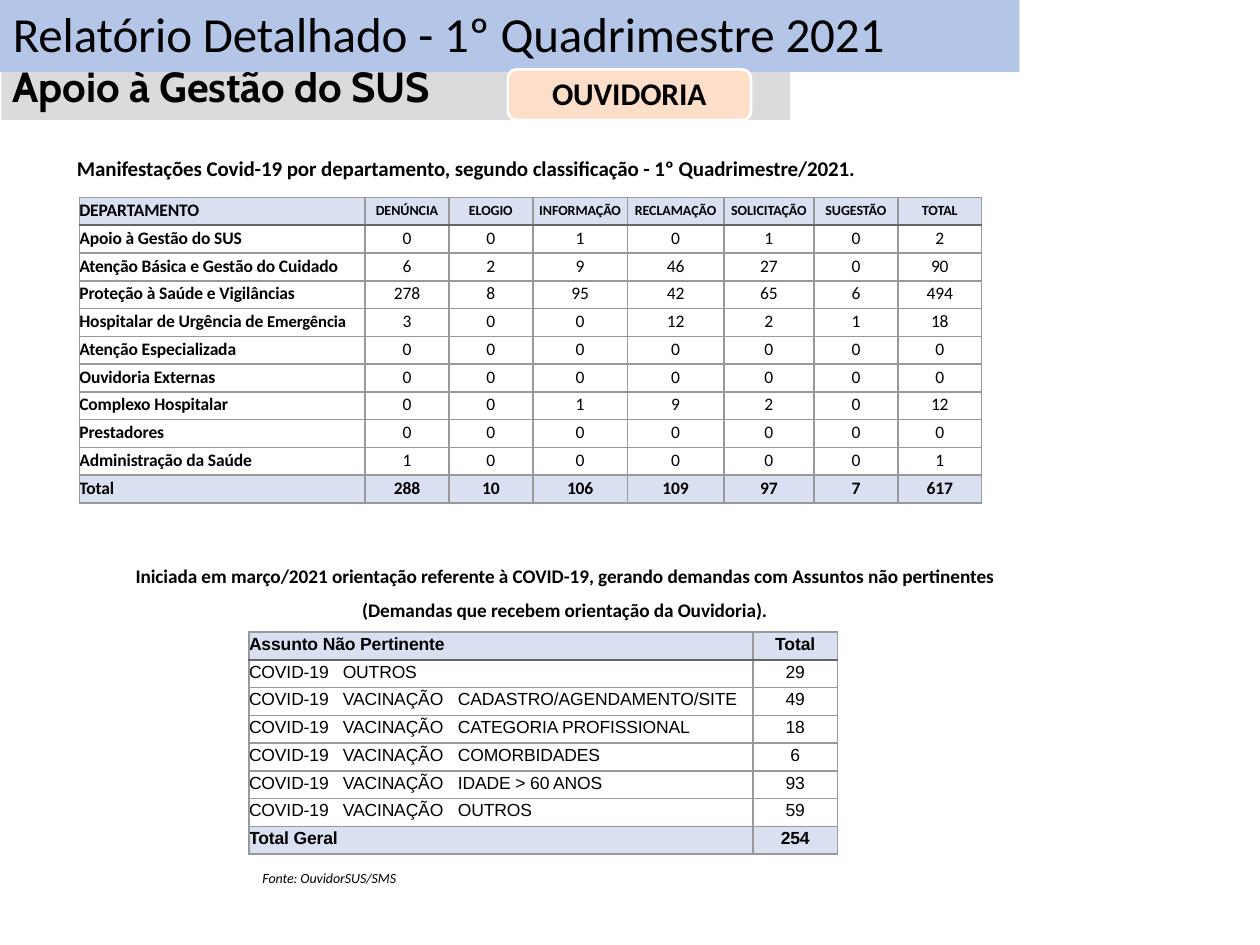
import pptx
import pptx.dml.color
import pptx.enum.shapes
import pptx.enum.text
import pptx.oxml
import pptx.oxml.ns
import pptx.util
from dataclasses import dataclass

Cm = pptx.util.Cm
Pt = pptx.util.Pt
Align = pptx.enum.text.PP_ALIGN
Preset = pptx.enum.shapes.MSO_SHAPE


@dataclass(frozen=True)
class Theme:
    band: str = "B4C6E7"
    strip: str = "DBDBDB"
    badge: str = "FDDEC9"
    badge_line: str = "FFFFFF"
    shade: str = "D9E0F1"
    grid: str = "999999"
    header_rule: str = "666666"
    ink: str = "000000"
    body: str = "Calibri"
    section: str = "Cabin"
    plain: str = "Arial"
    title_size: float = 28
    section_size: float = 24
    badge_size: float = 18
    heading_size: float = 12
    note_size: float = 11
    cell_size: float = 10
    tight_size: float = 9.5
    small_size: float = 8
    tracking: int = -5


def rgb(code):
    return pptx.dml.color.RGBColor.from_string(code)


def draw_borders(cell, lines):
    """Add edge lines in the order left, right, top, bottom."""
    properties = cell._tc.get_or_add_tcPr()
    for index, (side, (color, points)) in enumerate(zip("LRTB", lines)):
        properties.insert(index, pptx.oxml.parse_xml(
            f'<a:ln{side} {pptx.oxml.ns.nsdecls("a")} w="{int(Pt(points))}">'
            f'<a:solidFill><a:srgbClr val="{color}"/></a:solidFill></a:ln{side}>'))


def set_tabs(para, stops):
    """Place left tab stops, given in centimetres."""
    tabs = "".join(f'<a:tab pos="{int(Cm(stop))}" algn="l"/>' for stop in stops)
    para._p.get_or_add_pPr().append(pptx.oxml.parse_xml(
        f'<a:tabLst {pptx.oxml.ns.nsdecls("a")}>{tabs}</a:tabLst>'))


class SlideBuilder:
    def __init__(self, deck, theme):
        self.theme = theme
        self.page = deck.slides.add_slide(deck.slide_layouts[6])

    def fill_para(self, para, content, align=Align.LEFT, **format_values):
        """Fill a paragraph with a string or with (text, size) spans."""
        para.alignment = align
        spans = [(content, None)] if isinstance(content, str) else content
        for text, size in spans:
            span = para.add_run()
            span.text = text
            values = {"name": self.theme.body, "bold": False, **format_values}
            values["size"] = Pt(size or values["size"])
            for name, value in values.items():
                setattr(span.font, name, value)
            span.font.color.rgb = rgb(self.theme.ink)
            span._r.get_or_add_rPr().set("spc", str(self.theme.tracking))

    def shape(self, preset, place, fill, line=None):
        shape = self.page.shapes.add_shape(preset, *map(Cm, place))
        shape.shadow.inherit = False
        shape.fill.solid()
        shape.fill.fore_color.rgb = rgb(fill)
        if line:
            shape.line.color.rgb = rgb(line)
            shape.line.width = Pt(1.5)
        else:
            shape.line.fill.background()
        return shape

    def text(self, place, lines, top=0.04, gap=0, **format_values):
        box = self.page.shapes.add_textbox(*map(Cm, place))
        frame = box.text_frame
        margins = {"margin_left": 0.03, "margin_top": top,
                   "margin_right": 0, "margin_bottom": 0}
        for name, value in margins.items():
            setattr(frame, name, Cm(value))
        frame.word_wrap = True
        for index, line in enumerate(lines):
            para = frame.add_paragraph() if index else frame.paragraphs[0]
            if index:
                para.space_before = Pt(gap)
            self.fill_para(para, line, **format_values)

    def table(self, left, top, widths, rows, font, head_size, bold_labels, tabs=()):
        """Draw a grid whose first and last rows are shaded and bold."""
        height = 0.56
        grid = self.page.shapes.add_table(
            len(rows), len(widths), Cm(left), Cm(top),
            Cm(sum(widths)), Cm(height * len(rows))).table
        grid.first_row = grid.horz_banding = False
        for column, width in zip(grid.columns, widths):
            column.width = Cm(width)
        for r, values in enumerate(rows):
            grid.rows[r].height = Cm(height)
            for c, value in enumerate(values):
                size = head_size if r == 0 and c else self.theme.cell_size
                self.cell(grid.cell(r, c), value, r, c, r in (0, len(rows) - 1),
                          bold_labels, tabs, font, size)

    def cell(self, cell, value, r, c, shaded, bold_labels, tabs, font, size):
        theme = self.theme
        small = size < theme.cell_size
        cell.margin_left = cell.margin_right = cell.margin_bottom = 0
        cell.margin_top = Cm(0.09 if small else 0.05)
        if shaded:
            cell.fill.solid()
            cell.fill.fore_color.rgb = rgb(theme.shade)
        else:
            cell.fill.background()
        thin, thick = (theme.grid, 1), (theme.header_rule, 1.5)
        draw_borders(cell, (thin, thin, thick if r == 1 else thin,
                            thick if r == 0 else thin))
        para = cell.text_frame.paragraphs[0]
        if tabs and not c:
            set_tabs(para, tabs)
        self.fill_para(para, value, Align.CENTER if c else Align.LEFT, name=font,
                       size=size, bold=shaded or (bold_labels and c == 0))


def department_rows(theme):
    records = [
        ("Apoio à Gestão do SUS", "0 0 1 0 1 0 2"),
        ("Atenção Básica e Gestão do Cuidado", "6 2 9 46 27 0 90"),
        ("Proteção à Saúde e Vigilâncias", "278 8 95 42 65 6 494"),
        ([("Hospitalar de Urgência de ", None), ("Emergência", theme.tight_size)],
         "3 0 0 12 2 1 18"),
        ("Atenção Especializada", "0 0 0 0 0 0 0"),
        ("Ouvidoria Externas", "0 0 0 0 0 0 0"),
        ("Complexo Hospitalar", "0 0 1 9 2 0 12"),
        ("Prestadores", "0 0 0 0 0 0 0"),
        ("Administração da Saúde", "1 0 0 0 0 0 1"),
        ("Total", "288 10 106 109 97 7 617"),
    ]
    header = ("DEPARTAMENTO",
              "DENÚNCIA ELOGIO INFORMAÇÃO RECLAMAÇÃO SOLICITAÇÃO SUGESTÃO TOTAL")
    return [[label, *values.split()] for label, values in [header, *records]]


def subject_rows():
    vaccination = [("CADASTRO/AGENDAMENTO/SITE", "49"),
                   ("CATEGORIA PROFISSIONAL", "18"), ("COMORBIDADES", "6"),
                   ("IDADE > 60 ANOS", "93"), ("OUTROS", "59")]
    return [("Assunto Não Pertinente", "Total"), ("COVID-19\tOUTROS", "29"),
            *((f"COVID-19\tVACINAÇÃO\t{subject}", total)
              for subject, total in vaccination),
            ("Total Geral", "254")]


def main():
    deck = pptx.Presentation()
    deck.slide_width, deck.slide_height = Cm(25.4), Cm(19.05)
    theme = Theme()
    slide = SlideBuilder(deck, theme)

    slide.shape(Preset.RECTANGLE, (0.03, 1.45, 15.9, 0.97), theme.strip)
    slide.text((0.23, 1.19, 8.86, 1.09), ["Apoio à Gestão do SUS"],
               name=theme.section, size=theme.section_size, bold=True)
    slide.shape(Preset.RECTANGLE, (0, 0, 20.55, 1.45), theme.band)
    slide.text((0.23, 0.03, 17.9, 1.27),
               ["Relatório Detalhado - 1º Quadrimestre 2021"], size=theme.title_size)
    badge = slide.shape(Preset.ROUNDED_RECTANGLE, (10.24, 1.4, 4.9, 1.02),
                        theme.badge, theme.badge_line)
    badge.adjustments[0] = 0.17
    slide.text((11.1, 1.45, 3.2, 0.84), ["OUVIDORIA"],
               size=theme.badge_size, bold=True)
    slide.text((5.26, 17.48, 2.9, 0.41), ["Fonte: OuvidorSUS/SMS"],
               size=theme.small_size, italic=True)
    slide.text((1.52, 3.1, 16.2, 0.58),
               ["Manifestações Covid-19 por departamento, segundo classificação - "
                "1º Quadrimestre/2021."], size=theme.heading_size, bold=True)
    slide.table(1.6, 3.98, (5.76, 1.69, 1.69, 1.91, 1.94, 1.82, 1.69, 1.69),
                department_rows(theme), theme.body, theme.small_size, True)
    slide.table(5.02, 12.74, (10.16, 1.7), subject_rows(), theme.plain,
                theme.cell_size, False, tabs=(1.89, 4.21))
    slide.text((2.52, 11.13, 17.7, 1.42),
               ["Iniciada em março/2021 orientação referente à COVID-19, gerando "
                "demandas com Assuntos não pertinentes",
                "(Demandas que recebem orientação da Ouvidoria)."],
               top=0.25, gap=6, align=Align.CENTER, size=theme.note_size, bold=True)
    deck.save("out.pptx")


if __name__ == "__main__":
    main()
